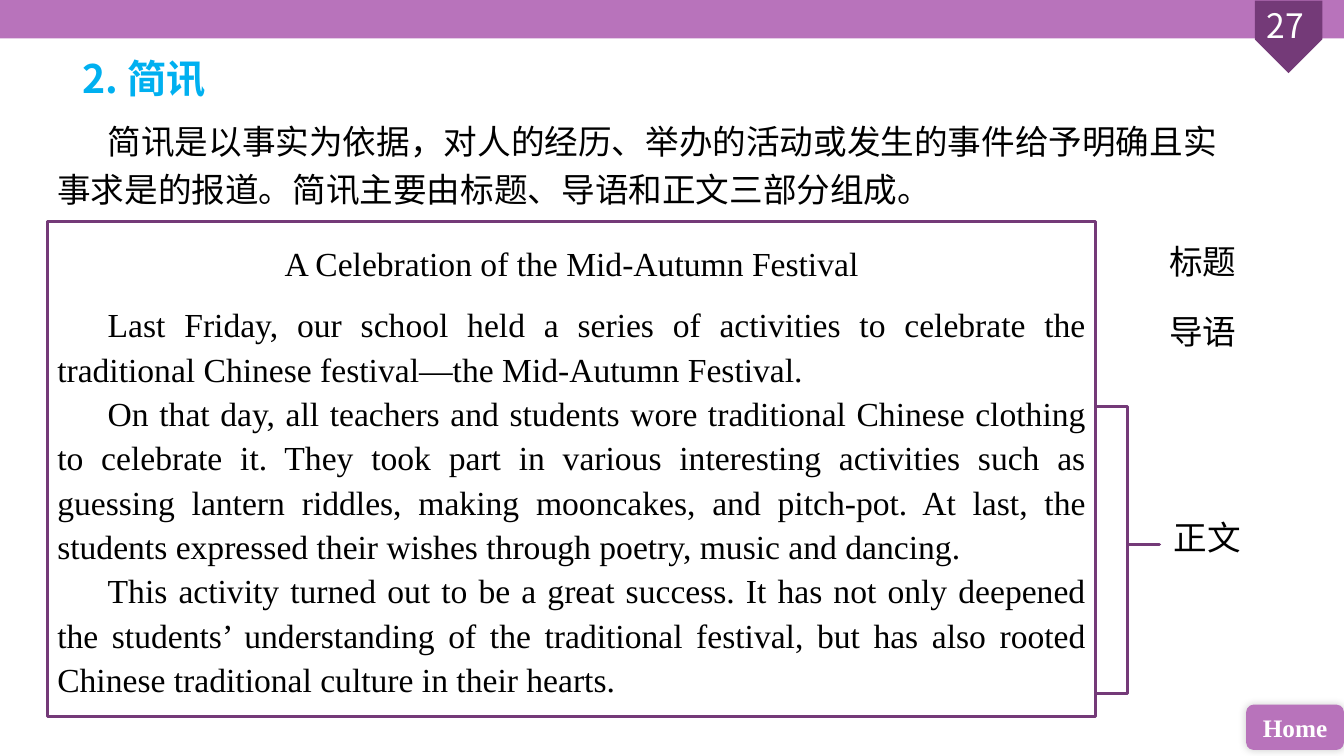
from dataclasses import dataclass

from lxml import etree
from pptx import Presentation
from pptx.dml.color import RGBColor
from pptx.enum.shapes import MSO_SHAPE
from pptx.enum.text import MSO_ANCHOR, PP_ALIGN
from pptx.oxml.ns import qn
from pptx.util import Inches, Pt

RECT, PENTAGON = MSO_SHAPE.RECTANGLE, MSO_SHAPE.PENTAGON
ROUNDED, BRACE = MSO_SHAPE.ROUNDED_RECTANGLE, MSO_SHAPE.RIGHT_BRACE
TOP, MIDDLE = MSO_ANCHOR.TOP, MSO_ANCHOR.MIDDLE
LEFT, CENTER, JUSTIFY = PP_ALIGN.LEFT, PP_ALIGN.CENTER, PP_ALIGN.JUSTIFY


@dataclass(frozen=True)
class Theme:
    """Colours, fonts and sizes of the slide."""
    lilac: str = "B873BB"
    plum: str = "743A78"
    sky: str = "00B0F0"
    ink: str = "000000"
    paper: str = "FFFFFF"
    serif: str = "Times New Roman"
    label: str = "Calibri"
    cjk: str = "Noto Sans CJK SC"
    heading: int = 28
    body: int = 24
    button: int = 18
    outline: float = 2.25


THEME = Theme()
INDENT = 0.5
INTRO = ("简讯是以事实为依据，对人的经历、举办的活动或发生的事件给予明确且实事求是的报道。"
         "简讯主要由标题、导语和正文三部分组成。")
REPORT_TITLE = "A Celebration of the Mid-Autumn Festival"
REPORT = (
    "Last Friday, our school held a series of activities to celebrate the traditional "
    "Chinese festival—the Mid-Autumn Festival.",
    "On that day, all teachers and students wore traditional Chinese clothing to celebrate "
    "it. They took part in various interesting activities such as guessing lantern riddles, "
    "making mooncakes, and pitch-pot. At last, the students expressed their wishes through "
    "poetry, music and dancing.",
    "This activity turned out to be a great success. It has not only deepened the students’ "
    "understanding of the traditional festival, but has also rooted Chinese traditional "
    "culture in their hearts.",
)


def add_figure(slide, kind, box, fill=None, line=None):
    """Add a preset shape with the given fill and outline."""
    figure = slide.shapes.add_shape(kind, *map(Inches, box))
    figure.shadow.inherit = False
    if fill:
        figure.fill.solid()
        figure.fill.fore_color.rgb = RGBColor.from_string(fill)
    else:
        figure.fill.background()
    if line:
        figure.line.color.rgb = RGBColor.from_string(line)
        figure.line.width = Pt(THEME.outline)
    else:
        figure.line.fill.background()
    return figure


def write(paragraph, text, font=THEME.serif, size=THEME.body, color=THEME.ink,
          bold=False, east_asian=False, indent=0, **layout):
    """Fill a paragraph with one formatted run."""
    for attribute, value in layout.items():
        setattr(paragraph, attribute, value)
    if indent:
        properties = paragraph._p.get_or_add_pPr()
        properties.set("marL", "0")
        properties.set("indent", str(Inches(indent)))
    run = paragraph.add_run()
    run.text = text
    for attribute, value in {"name": font, "size": Pt(size), "bold": bold}.items():
        setattr(run.font, attribute, value)
    run.font.color.rgb = RGBColor.from_string(color)
    if east_asian:
        etree.SubElement(run._r.get_or_add_rPr(), qn("a:ea"), typeface=THEME.cjk)


def add_text(slide, box, text, **style):
    """Add a wrapping text box holding one paragraph."""
    frame = slide.shapes.add_textbox(*map(Inches, box)).text_frame
    frame.word_wrap = True
    frame.vertical_anchor = TOP
    write(frame.paragraphs[0], text, **style)


def add_glow(figure):
    """Give a shape a soft translucent shadow."""
    effects = figure._element.spPr.find(qn("a:effectLst"))
    shadow = etree.SubElement(effects, qn("a:outerShdw"), blurRad=str(Pt(6)),
                              dist="0", dir=str(315 * 60000))
    color = etree.SubElement(shadow, qn("a:srgbClr"), val=THEME.ink)
    etree.SubElement(color, qn("a:alpha"), val="20000")


def build_banner(slide, box):
    """Draw the top band with its page-number ribbon."""
    left, top, width, _ = box
    add_figure(slide, RECT, box, THEME.lilac)
    ribbon = add_figure(slide, PENTAGON, (left + width - 0.91, top + 0.03, 0.72, 0.67), THEME.plum)
    ribbon.rotation = 90
    add_text(slide, (left + width - 1.07, top, 0.98, 0.5), "27", font=THEME.cjk,
             color=THEME.paper, east_asian=True, alignment=CENTER)


def build_home_button(slide, box):
    """Draw the Home button."""
    button = add_figure(slide, ROUNDED, box, THEME.lilac)
    add_glow(button)
    button.text_frame.vertical_anchor = MIDDLE
    write(button.text_frame.paragraphs[0], "Home", size=THEME.button,
          color=THEME.paper, bold=True, alignment=CENTER)


def build_introduction(slide, box):
    """Write the section heading and the definition under it."""
    left, top, width, height = box
    add_text(slide, (left, top + 0.67, width, height - 0.67), INTRO,
             east_asian=True, indent=INDENT, line_spacing=1.2)
    add_text(slide, (left + 0.25, top, 4.64, 0.67), "2. 简讯", font=THEME.cjk,
             size=THEME.heading, color=THEME.sky, bold=True, east_asian=True, line_spacing=1.2)


def build_report(slide, box):
    """Draw the framed sample report."""
    frame = add_figure(slide, RECT, box, THEME.paper, THEME.plum).text_frame
    frame.word_wrap = True
    frame.vertical_anchor = MIDDLE
    write(frame.paragraphs[0], REPORT_TITLE, alignment=CENTER, line_spacing=1.1,
          space_after=Pt(12))
    for passage in REPORT:
        write(frame.add_paragraph(), passage, indent=INDENT, alignment=JUSTIFY, line_spacing=1.1)


def build_part_labels(slide, box):
    """Name the parts of the report and brace its main text."""
    left, top, _, height = box
    for part, dx, dy in (("标题", 0.63, 0.06), ("导语", 0.63, 0.76), ("正文", 0.67, 2.8)):
        add_text(slide, (left + dx, top + dy, 1.1, 0.6), part, font=THEME.label,
                 east_asian=True, alignment=LEFT, line_spacing=1.2)
    brace = add_figure(slide, BRACE, (left, top + 1.83, 0.63, height - 2.06), line=THEME.plum)
    brace.adjustments[0] = 0
    brace.adjustments[1] = 0.482


def main():
    """Build and save the slide."""
    deck = Presentation()
    deck.slide_width, deck.slide_height = Inches(13.33), Inches(7.5)
    slide = deck.slides.add_slide(deck.slide_layouts[6])
    build_banner(slide, (0, 0, 13.33, 0.38))
    build_home_button(slide, (12.36, 6.99, 0.97, 0.45))
    build_introduction(slide, (0.47, 0.4, 11.87, 1.74))
    build_report(slide, (0.47, 2.2, 10.4, 4.91))
    build_part_labels(slide, (10.87, 2.2, 1.9, 4.91))
    deck.save("out.pptx")


if __name__ == "__main__":
    main()
